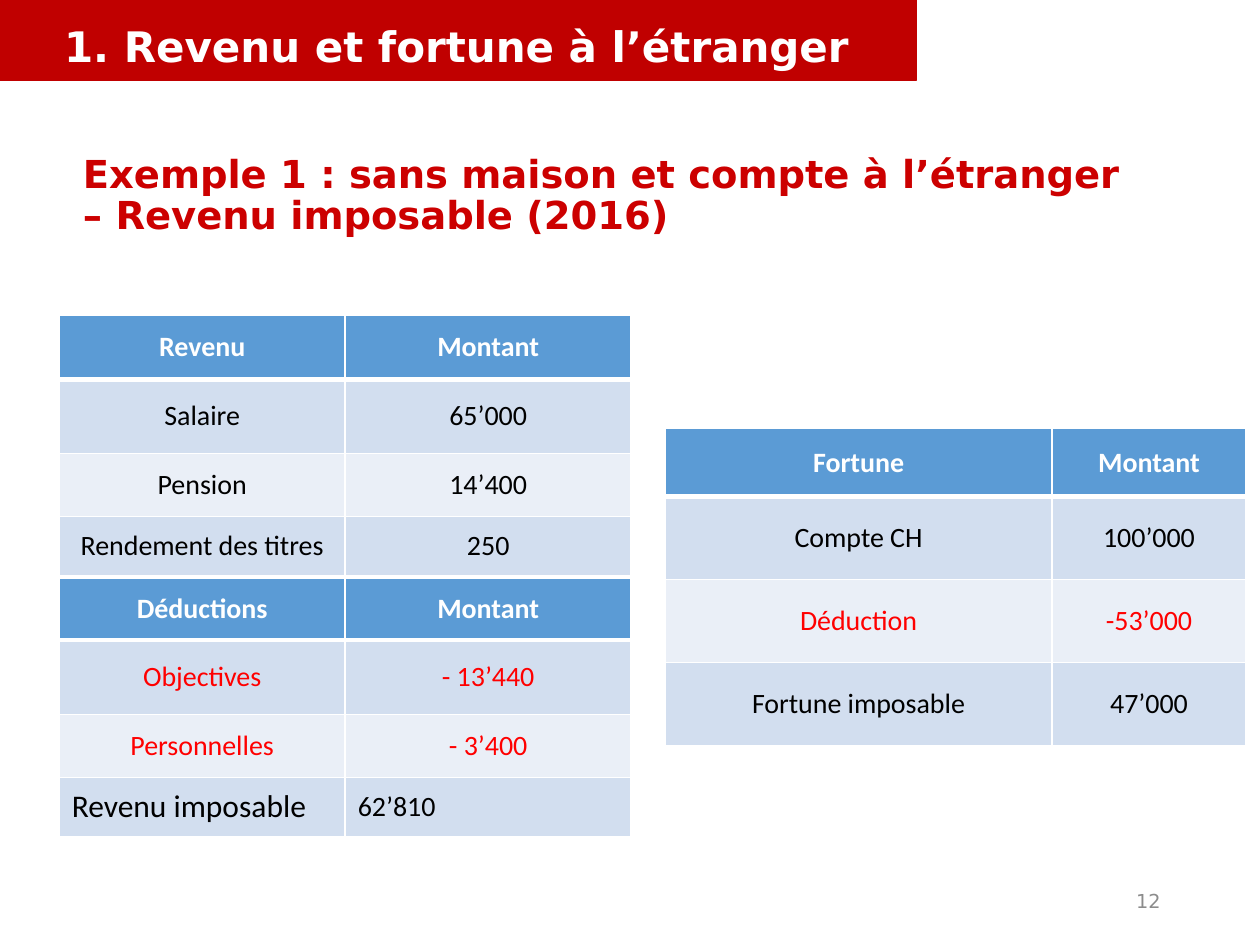
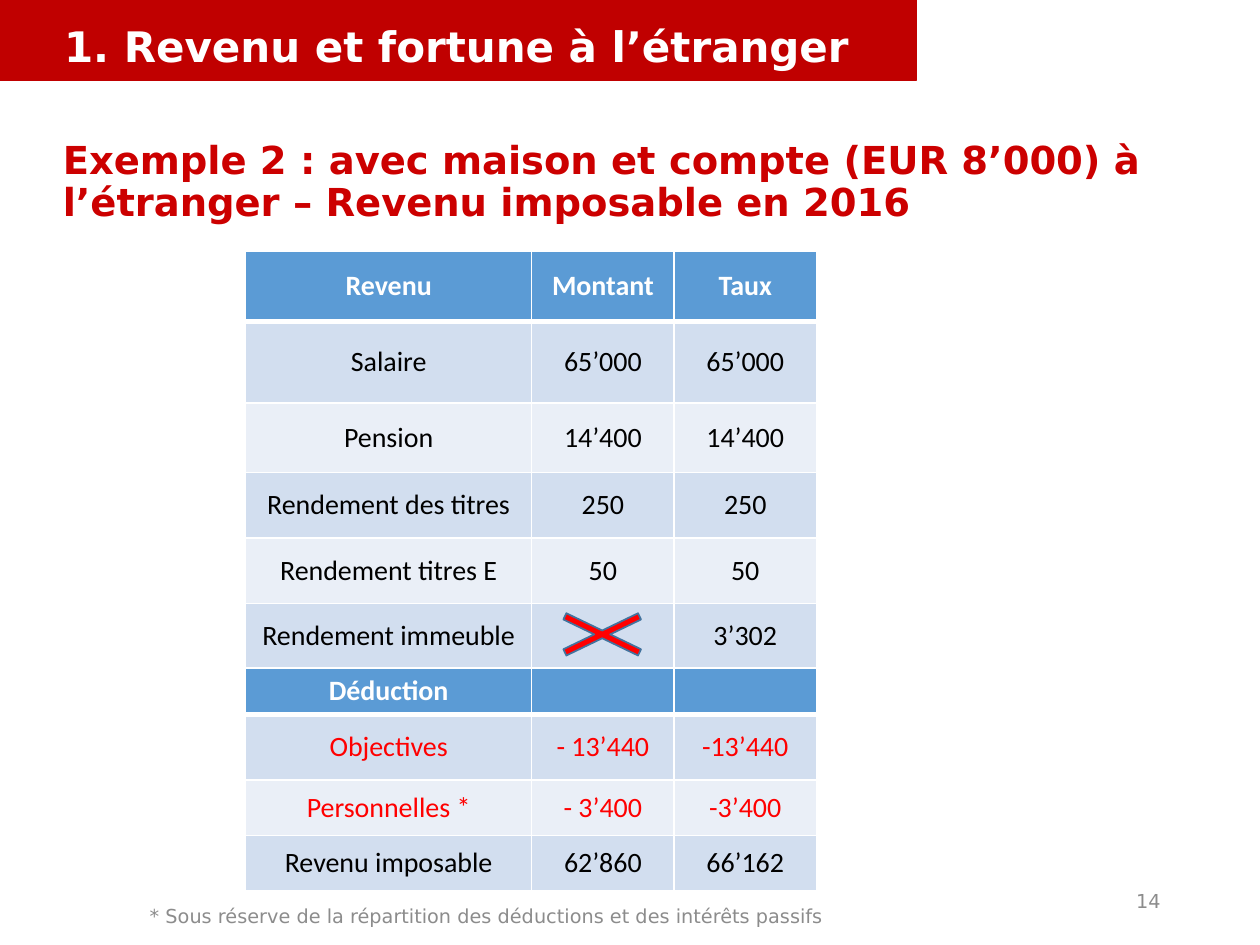
import pptx
import pptx.dml.color
import pptx.enum.shapes
import pptx.enum.text
import pptx.oxml.ns
import pptx.util
from lxml import etree

Inches = pptx.util.Inches
Pt = pptx.util.Pt
RGBColor = pptx.dml.color.RGBColor
Shape = pptx.enum.shapes.MSO_SHAPE
Align = pptx.enum.text.PP_ALIGN
Anchor = pptx.enum.text.MSO_ANCHOR
qn = pptx.oxml.ns.qn

WHITE = RGBColor(0xFF, 0xFF, 0xFF)
BLACK = RGBColor(0x00, 0x00, 0x00)
RED = RGBColor(0xFF, 0x00, 0x00)
BAND_RED = RGBColor(0xC0, 0x00, 0x00)
TITLE_RED = RGBColor(0xCC, 0x00, 0x00)
GREY = RGBColor(0x8C, 0x8C, 0x8C)
HEADER_BLUE = RGBColor(0x5B, 0x9B, 0xD5)
BAND_BLUE = RGBColor(0xD2, 0xDE, 0xEF)
PALE_BLUE = RGBColor(0xEA, 0xEF, 0xF7)
CROSS_OUTLINE = RGBColor(0x43, 0x73, 0x9E)

SECTION_FONT = {"name": "DejaVu Sans", "size": Pt(24), "bold": True}
TITLE_FONT = {"name": "DejaVu Sans", "size": Pt(22), "bold": True}
SMALL_FONT = {"name": "DejaVu Sans", "size": Pt(11), "bold": False}
HEADER_FONT = {"name": "Calibri", "size": Pt(16), "bold": True}
CELL_FONT = {"name": "Calibri", "size": Pt(16), "bold": False}

HEADING_FORMAT = {"line_spacing": 0.9}
CENTERED = {"alignment": Align.CENTER}


def apply_format(target, values):
    for name, value in values.items():
        setattr(target, name, value)


class TaxDeck:
    section = "1. Revenu et fortune à l’étranger"

    def __init__(self):
        self.presentation = pptx.Presentation()
        apply_format(self.presentation, {"slide_width": Inches(10), "slide_height": Inches(7.5)})
        self.slide = None

    def add_slide(self, title, title_box, number):
        layout = self.presentation.slide_layouts[6]
        self.slide = self.presentation.slides.add_slide(layout)
        self.add_shape(Shape.RECTANGLE, (0, 0, 7.27, 0.64), BAND_RED, BAND_RED, 0.75)
        self.add_text(title, title_box, TITLE_FONT, TITLE_RED, Anchor.BOTTOM, HEADING_FORMAT)
        self.add_text(self.section, (0.41, 0.08, 8.62, 0.54), SECTION_FONT, WHITE,
                      Anchor.BOTTOM, HEADING_FORMAT)
        self.add_text(str(number), (7.06, 6.95, 2.25, 0.4), SMALL_FONT, GREY,
                      Anchor.MIDDLE, {"alignment": Align.RIGHT})

    def add_shape(self, kind, box, fill, outline, width):
        shape = self.slide.shapes.add_shape(kind, *map(Inches, box))
        shape.shadow.inherit = False
        shape.fill.solid()
        shape.fill.fore_color.rgb = fill
        shape.line.color.rgb = outline
        shape.line.width = Pt(width)
        return shape

    def add_text(self, text, box, font, color, anchor, paragraph_format):
        frame = self.slide.shapes.add_textbox(*map(Inches, box)).text_frame
        apply_format(frame, {"word_wrap": True, "vertical_anchor": anchor})
        self.fill_paragraph(frame.paragraphs[0], text, font, color, paragraph_format)

    def fill_paragraph(self, paragraph, text, font, color, paragraph_format):
        apply_format(paragraph, paragraph_format)
        run = paragraph.add_run()
        run.text = text
        apply_format(run.font, font)
        run.font.color.rgb = color

    def add_table(self, left, top, widths, rows):
        heights = [height for height, color, texts in rows]
        box = map(Inches, (left, top, sum(widths), sum(heights)))
        table = self.slide.shapes.add_table(len(rows), len(widths), *box).table
        for column, width in zip(table.columns, widths):
            column.width = Inches(width)
        for index, (height, color, texts) in enumerate(rows):
            table.rows[index].height = Inches(height)
            fill = HEADER_BLUE if index == 0 else BAND_BLUE if index % 2 else PALE_BLUE
            font = CELL_FONT if index else HEADER_FONT
            borders = {"L": 1, "R": 1, "T": 3 if index == 1 else 1, "B": 1 if index else 3}
            for cell, text in zip(table.rows[index].cells, texts):
                self.add_borders(cell, borders)
                cell.fill.solid()
                cell.fill.fore_color.rgb = fill
                cell.vertical_anchor = Anchor.MIDDLE
                paragraph = cell.text_frame.paragraphs[0]
                if text:
                    self.fill_paragraph(paragraph, text, font, color, CENTERED)
                else:
                    etree.SubElement(paragraph._p, qn("a:endParaRPr"), sz="1600")
        return table

    def add_borders(self, cell, borders):
        properties = cell._tc.get_or_add_tcPr()
        for side, width in borders.items():
            line = etree.SubElement(properties, qn(f"a:ln{side}"), w=str(Pt(width)))
            fill = etree.SubElement(line, qn("a:solidFill"))
            etree.SubElement(fill, qn("a:srgbClr"), val=str(WHITE))


def build_without_house(deck):
    deck.add_slide("Exemple 1 : sans maison et compte à l’étranger – Revenu imposable (2016)",
                   (0.56, 1.4, 8.62, 0.54), 12)
    deck.add_table(0.47, 2.5, (2.27, 2.27), [
        (0.51, WHITE, ("Revenu", "Montant")),
        (0.59, BLACK, ("Salaire", "65’000")),
        (0.5, BLACK, ("Pension", "14’400")),
        (0.47, BLACK, ("Rendement des titres", "250")),
    ])
    deductions = deck.add_table(0.47, 4.59, (2.27, 2.27), [
        (0.49, WHITE, ("Déductions", "Montant")),
        (0.59, RED, ("Objectives", "- 13’440")),
        (0.5, RED, ("Personnelles", "- 3’400")),
        (0.47, BLACK, ("Revenu imposable", "62’810")),
    ])
    for cell, size in zip(deductions.rows[3].cells, (18, 16)):
        paragraph = cell.text_frame.paragraphs[0]
        paragraph.alignment = Align.LEFT
        paragraph.runs[0].font.size = Pt(size)
    deck.add_table(5.28, 3.4, (3.07, 1.54), [
        (0.54, WHITE, ("Fortune", "Montant")),
        (0.66, BLACK, ("Compte CH", "100’000")),
        (0.66, RED, ("Déduction", "-53’000")),
        (0.66, BLACK, ("Fortune imposable", "47’000")),
    ])


def build_with_house(deck):
    deck.add_slide("Exemple 2 : avec maison et compte (EUR 8’000) à l’étranger"
                   " – Revenu imposable en 2016", (0.4, 1.29, 8.8, 0.54), 14)
    widths = (2.27, 1.13, 1.13)
    deck.add_table(1.95, 1.99, widths, [
        (0.56, WHITE, ("Revenu", "Montant", "Taux")),
        (0.65, BLACK, ("Salaire", "65’000", "65’000")),
        (0.55, BLACK, ("Pension", "14’400", "14’400")),
        (0.52, BLACK, ("Rendement des titres", "250", "250")),
        (0.52, BLACK, ("Rendement titres E", "50", "50")),
        (0.52, BLACK, ("Rendement immeuble", "", "3’302")),
    ])
    deck.add_table(1.95, 5.3, widths, [
        (0.37, WHITE, ("Déduction", "", "")),
        (0.52, RED, ("Objectives", "- 13’440", "-13’440")),
        (0.44, RED, ("Personnelles *", "- 3’400", "-3’400")),
        (0.44, BLACK, ("Revenu imposable", "62’860", "66’162")),
    ])
    cross = deck.add_shape(Shape.MATH_MULTIPLY, (4.21, 4.76, 1.14, 0.55), RED, CROSS_OUTLINE, 1)
    cross.adjustments[0] = 0.1
    deck.add_text("* Sous réserve de la répartition des déductions et des intérêts passifs",
                  (1.09, 7.07, 6.07, 0.4), SMALL_FONT, GREY, Anchor.MIDDLE, {})


def main():
    deck = TaxDeck()
    build_without_house(deck)
    build_with_house(deck)
    deck.presentation.save("out.pptx")


if __name__ == "__main__":
    main()
